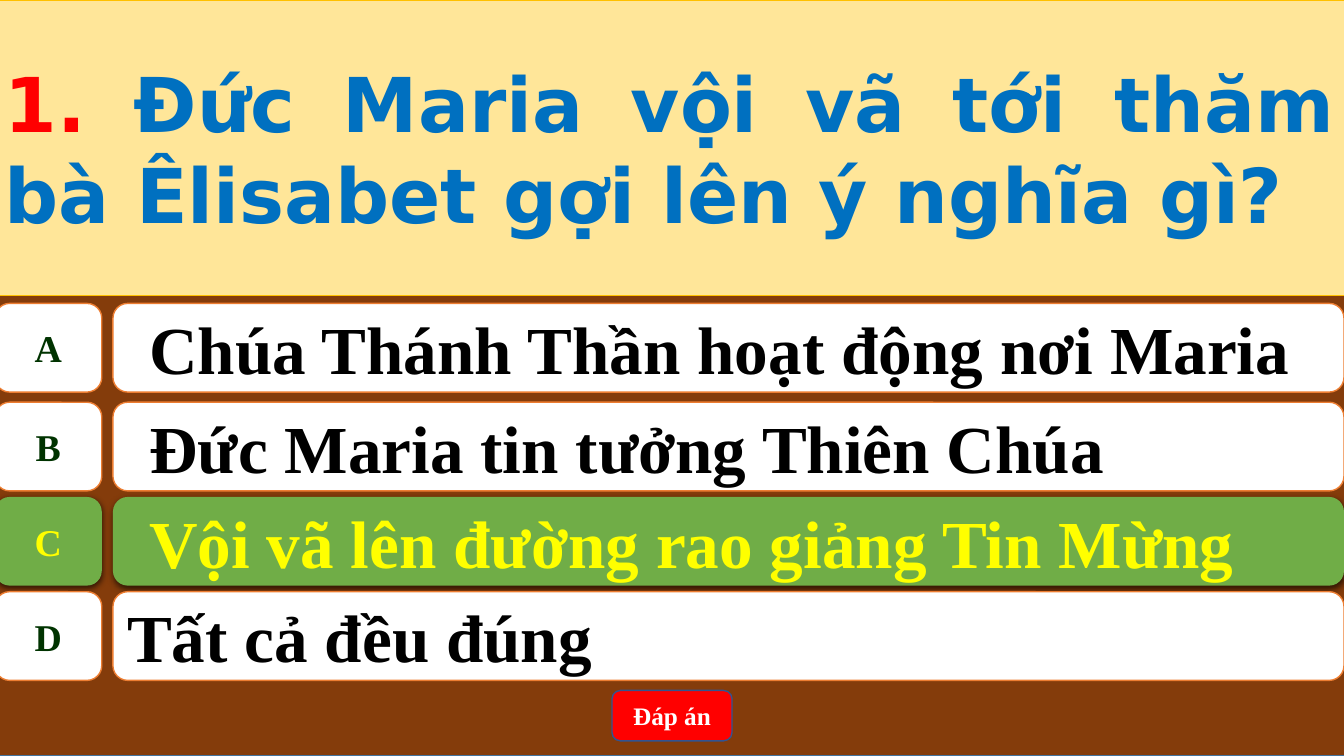
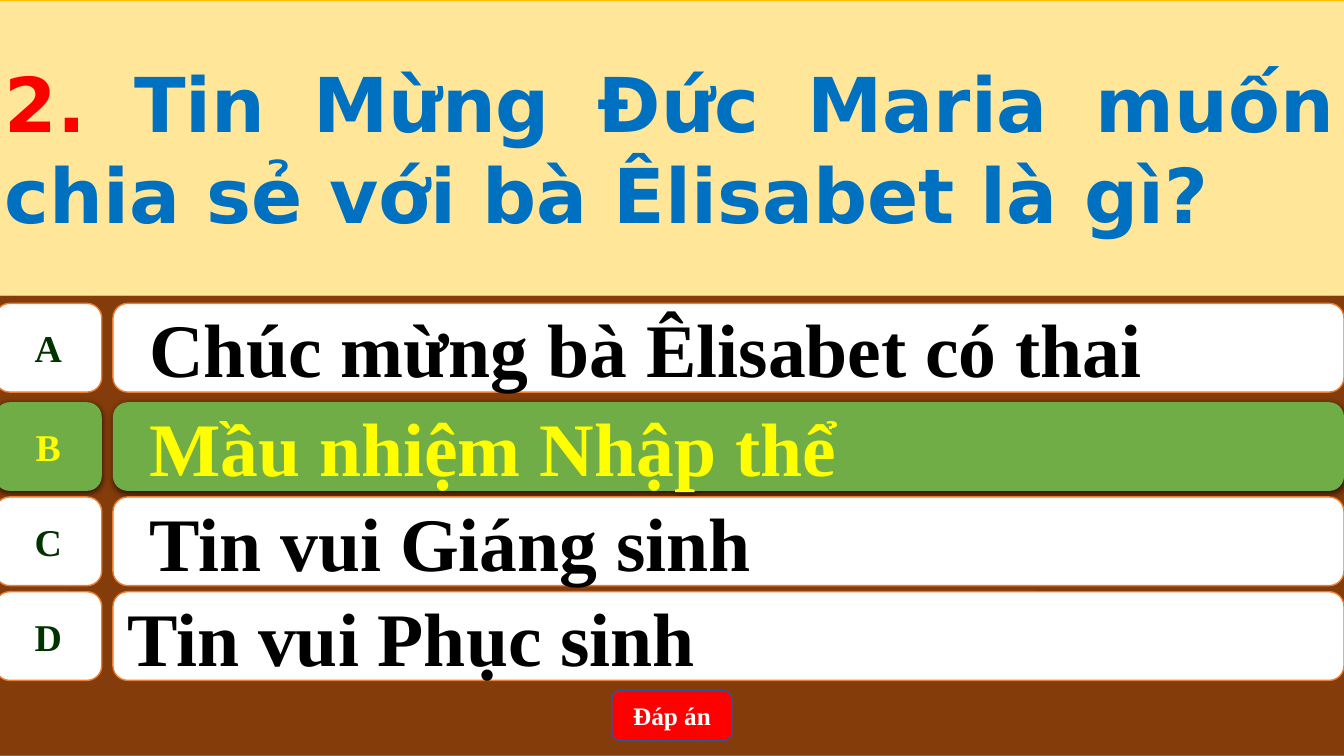
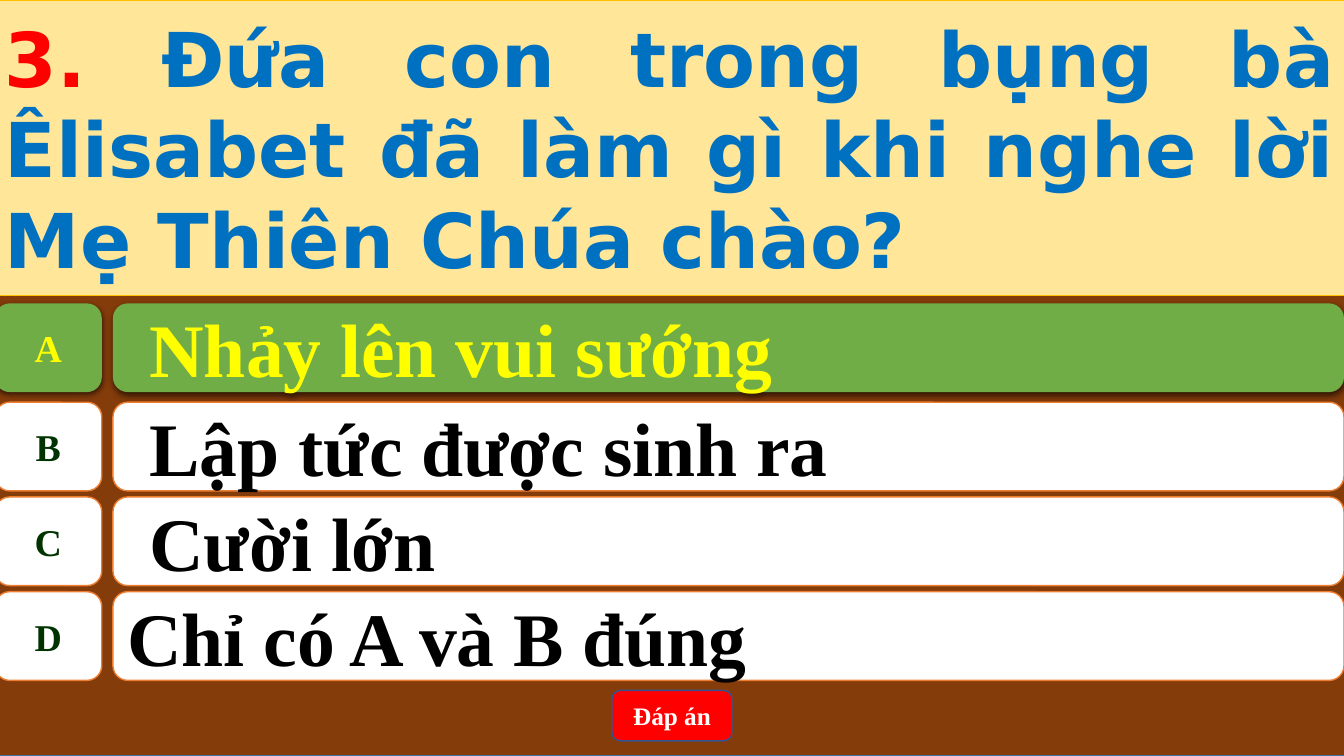
from lxml import etree
from pptx import Presentation
from pptx.dml.color import RGBColor
from pptx.enum.shapes import MSO_SHAPE
from pptx.enum.text import MSO_ANCHOR, PP_ALIGN
from pptx.oxml.ns import qn
from pptx.util import Inches, Pt

RECT = MSO_SHAPE.RECTANGLE
ROUNDED = MSO_SHAPE.ROUNDED_RECTANGLE
BADGE = MSO_SHAPE.FLOWCHART_ALTERNATE_PROCESS
MIDDLE = MSO_ANCHOR.MIDDLE
LEFT, CENTER, JUSTIFY = PP_ALIGN.LEFT, PP_ALIGN.CENTER, PP_ALIGN.JUSTIFY

COLORS = {
    "backdrop": "843C0B", "backdrop_edge": "43739E",
    "band": "FFE699", "band_edge": "FFC000",
    "number": "FF0000", "question": "0070C0",
    "row": "FFFFFF", "row_edge": "ED7D31",
    "letter": "003300", "answer": "000000",
    "correct": "70AD47", "correct_text": "FFFF00",
    "button": "FF0000", "button_edge": "325491", "button_text": "FFFFFF",
    "shadow": "000000",
}
SERIF, SANS = "Times New Roman", "DejaVu Sans"

SLIDE_W, SLIDE_H = 13.33, 7.5
BLEED = 0.05
FULL_W = SLIDE_W + BLEED + 0.01
BAND_H = 2.93
BADGE_W = 1.06
ANSWER_LEFT = 1.12
ROW_H, ROW_PITCH = 0.88, 0.94
# The first answer stands slightly apart from the evenly spaced others.
ROW_TOPS = [3.01] + [3.99 + ROW_PITCH * step for step in range(3)]
BUTTON_W, BUTTON_H, BUTTON_TOP = 1.19, 0.5, 6.85

QUIZ = [
    ("1. ", "Đức Maria vội vã tới thăm bà Êlisabet gợi lên ý nghĩa gì?",
     ["Chúa Thánh Thần hoạt động nơi Maria",
      "Đức Maria tin tưởng Thiên Chúa",
      "Vội vã lên đường rao giảng Tin Mừng",
      "Tất cả đều đúng"], "C", 48),
    ("2. ", "Tin Mừng Đức Maria muốn chia sẻ với bà Êlisabet là gì?",
     ["Chúc mừng bà Êlisabet có thai",
      "Mầu nhiệm Nhập thể",
      "Tin vui Giáng sinh",
      "Tin vui Phục sinh"], "B", 54),
    ("3. ", "Đứa con trong bụng bà Êlisabet đã làm gì khi nghe lời "
            "Mẹ Thiên Chúa chào?",
     ["Nhảy lên vui sướng",
      "Lập tức được sinh ra",
      "Cười lớn",
      "Chỉ có A và B đúng"], "A", 54),
]


def rgb(role):
    return RGBColor.from_string(COLORS[role])


def add_panel(slide, kind, box, fill, edge=None, edge_width=1):
    panel = slide.shapes.add_shape(kind, *map(Inches, box))
    panel.shadow.inherit = False
    panel.fill.solid()
    panel.fill.fore_color.rgb = rgb(fill)
    if edge:
        panel.line.color.rgb = rgb(edge)
        panel.line.width = Pt(edge_width)
    else:
        panel.line.fill.background()
    return panel


def write(panel, pieces, size, font, align, wrap=True):
    """Fill the panel with one bold paragraph of (text, colour role) pieces."""
    frame = panel.text_frame
    frame.word_wrap = wrap
    frame.vertical_anchor = MIDDLE
    paragraph = frame.paragraphs[0]
    paragraph.alignment = align
    for text, color in pieces:
        run = paragraph.add_run()
        run.text = text
        run.font.size = Pt(size)
        run.font.name = font
        run.font.bold = True
        run.font.color.rgb = rgb(color)
    return paragraph


def drop_shadow(panel):
    effects = panel._element.spPr.find(qn("a:effectLst"))
    shadow = etree.SubElement(effects, qn("a:outerShdw"), blurRad=str(Pt(4.5)),
                              dist=str(Pt(1.5)), dir="5400000",
                              algn="ctr", rotWithShape="0")
    color = etree.SubElement(shadow, qn("a:srgbClr"), val=COLORS["shadow"])
    etree.SubElement(color, qn("a:alpha"), val="63000")


def indent(paragraph):
    paragraph.level = 1
    properties = paragraph._p.get_or_add_pPr()
    properties.set("marL", str(Inches(0.5)))
    properties.set("indent", str(Inches(-0.28)))


def add_answer(slide, top, letter, answer, size, correct):
    fill, edge = ("correct", None) if correct else ("row", "row_edge")
    letter_color = "correct_text" if correct else "letter"
    answer_color = "correct_text" if correct else "answer"

    bar = add_panel(slide, ROUNDED,
                    (ANSWER_LEFT, top, SLIDE_W - ANSWER_LEFT, ROW_H), fill, edge)
    line = write(bar, [(answer, answer_color)], size, SERIF, LEFT)
    if letter != "D":
        indent(line)

    badge = add_panel(slide, BADGE, (-BLEED, top, BADGE_W, ROW_H), fill, edge)
    write(badge, [(letter, letter_color)], 27, SERIF, CENTER, wrap=False)

    if correct:
        drop_shadow(bar)
        drop_shadow(badge)


def add_question(slide, number, question):
    band = add_panel(slide, RECT, (-BLEED, 0, FULL_W, BAND_H),
                     "band", "band_edge", 0.5)
    write(band, [(number, "number"), (question, "question")], 54, SANS, JUSTIFY)


def add_button(slide):
    button = add_panel(slide, ROUNDED,
                       ((SLIDE_W - BUTTON_W) / 2, BUTTON_TOP, BUTTON_W, BUTTON_H),
                       "button", "button_edge")
    write(button, [("Đáp án", "button_text")], 18, SERIF, CENTER)


def add_quiz_slide(deck, number, question, answers, correct_letter, size):
    slide = deck.slides.add_slide(deck.slide_layouts[6])
    add_panel(slide, RECT, (-BLEED, 0, FULL_W, SLIDE_H),
              "backdrop", "backdrop_edge")
    add_question(slide, number, question)
    for top, letter, answer in zip(ROW_TOPS, "ABCD", answers):
        add_answer(slide, top, letter, answer, size, letter == correct_letter)
    add_button(slide)


def main():
    deck = Presentation()
    deck.slide_width, deck.slide_height = Inches(SLIDE_W), Inches(SLIDE_H)
    for entry in QUIZ:
        add_quiz_slide(deck, *entry)
    deck.save("out.pptx")


if __name__ == "__main__":
    main()
